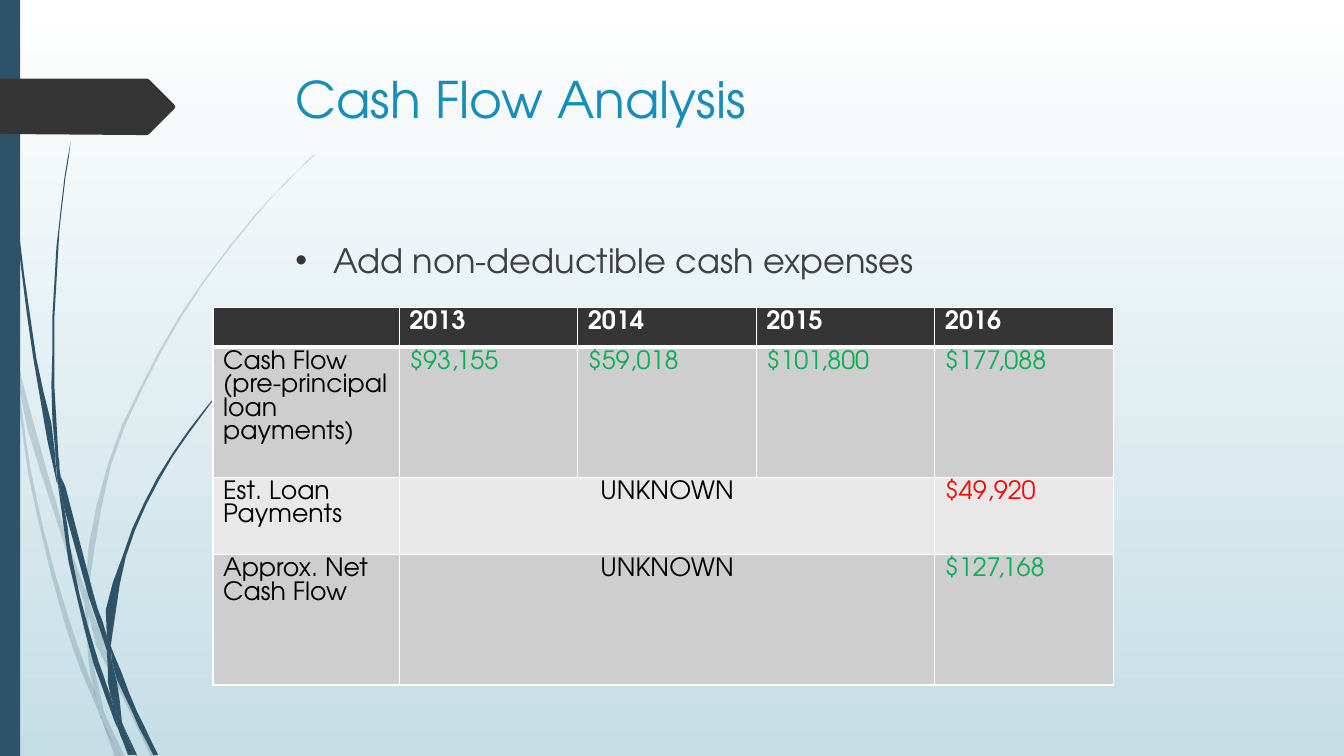
from dataclasses import dataclass

import lxml.etree
import pptx
import pptx.dml.color
import pptx.enum.dml
import pptx.enum.shapes
import pptx.enum.text
import pptx.oxml.ns
import pptx.util

Cm = pptx.util.Cm
Pt = pptx.util.Pt
qn = pptx.oxml.ns.qn
LEFT = pptx.enum.text.PP_ALIGN.LEFT
CENTER = pptx.enum.text.PP_ALIGN.CENTER

FONT = "TeX Gyre Adventor"
COLORS = {
    "sky_top": "FFFFFF", "sky_bottom": "C5DEE5", "wisp": "2E5369", "tag": "353535",
    "title": "178DBB", "body": "404040", "white": "FFFFFF", "black": "000000",
    "green": "00B050", "red": "FF0000", "dark_band": "CECECE", "light_band": "E8E8E8",
}
OUTLINE_UNITS_PER_CM = 100 / 2.54
CURVE_STEPS = 3

Point = tuple[float, float]


@dataclass
class Blade:
    """A piece of grass: one edge, then the other edge coming back."""
    edge: list[Point]
    back: list[Point]


@dataclass
class Entry:
    text: str
    color: str = "black"
    columns: int = 1
    bold: bool = False


@dataclass
class Band:
    height: float
    fill: str
    entries: list[Entry]
    bottom_line: float = 1


PALE_GRASS = [
    Blade([(11, 350), (9, 322), (0, 282)], [(0, 299), (10, 344)]),
    Blade([(14, 345), (17, 376), (58, 522), (84, 599)], [(85, 586), (62, 520), (14, 345)]),
    Blade([(88, 596), (88, 610), (123, 694), (150, 751)], [(155, 751), (127, 692), (92, 607)]),
    Blade([(119, 751), (124, 751)], [(105, 711)]),
    Blade([(93, 683), (70, 619), (31, 469), (17, 376), (11, 350)],
          [(28, 470), (65, 621), (92, 693), (101, 714), (99, 707)]),
    Blade([(84, 599), (87, 646), (93, 683), (96, 692), (105, 711)],
          [(103, 706), (91, 646), (88, 610), (88, 608)]),
    Blade([(88, 584), (110, 462), (160, 349), (229, 245), (268, 198), (290, 175), (312, 154)],
          [(312, 153), (289, 175), (268, 197), (228, 244), (158, 348), (107, 461),
           (85, 584), (85, 586), (88, 596)]),
    Blade([(101, 714), (114, 751)], [(119, 751)]),
    Blade([(88, 608), (88, 596)], [(85, 586), (84, 599)]),
    Blade([(96, 692), (93, 683), (99, 707), (101, 714), (119, 751)], [(105, 711)]),
]
DARK_GRASS = [
    Blade([(7, 110), (17, 233), (33, 355), (56, 477), (57, 481)],
          [(55, 457), (55, 453), (36, 355), (19, 232), (8, 109), (5, 48), (4, 0), (3, 0),
           (4, 48)]),
    Blade([(88, 592), (106, 645)], [(106, 631), (93, 590), (60, 472), (64, 505)]),
    Blade([(110, 641), (111, 656), (132, 708), (152, 749)], [(157, 749), (136, 706), (113, 649)]),
    Blade([(110, 691), (98, 657), (72, 556), (64, 505), (57, 477)],
          [(68, 557), (93, 659), (111, 708), (117, 722), (116, 717)]),
    Blade([(60, 472), (58, 453), (54, 349), (58, 245), (63, 193), (70, 141)],
          [(69.8, 141), (62, 193), (56, 245), (52, 349), (55, 449), (60, 472)]),
    Blade([(133, 749), (136, 749)], [(122, 719)]),
    Blade([(57, 477), (64, 505)], [(60, 472), (55, 449), (55, 453)]),
    Blade([(111, 633), (125, 552), (158, 476), (205, 406), (231, 374), (245, 359), (261, 344)],
          [(260, 344), (245, 358), (231, 373), (204, 405), (156, 474), (122, 551),
           (106, 631), (110, 641)]),
    Blade([(117, 722), (127, 749)], [(131, 749)]),
    Blade([(106, 645), (110, 691), (116, 706), (122, 719)], [(121, 716), (111, 656), (109, 651)]),
    Blade([(106, 645), (109, 651), (111, 656)], [(110, 641), (106, 631)]),
    Blade([(116, 706), (110, 691), (116, 717), (117, 722), (130, 749)], [(133, 749), (122, 719)]),
]
PAGE_TAG = [(0, 78), (146, 78), (148, 79), (173, 104), (174, 106), (173, 108), (148, 133),
            (146, 134), (136, 134), (0, 133)]

COLUMN_WIDTHS = [4.69] + [4.5] * 4
BANDS = [
    Band(1, "tag", [Entry("")] + [Entry(str(year), "white", bold=True)
                                  for year in range(2013, 2017)], bottom_line=3),
    Band(3.28, "dark_band", [Entry("Cash Flow (pre-principal loan payments)")]
         + [Entry(amount, "green") for amount in ("$93,155", "$59,018", "$101,800", "$177,088")]),
    Band(1.95, "light_band", [Entry("Est. Loan Payments"), Entry("UNKNOWN", columns=3),
                              Entry("$49,920", "red")]),
    Band(3.28, "dark_band", [Entry("Approx. Net Cash Flow"), Entry("UNKNOWN", columns=3),
                             Entry("$127,168", "green")]),
]


def rgb(name: str) -> pptx.dml.color.RGBColor:
    return pptx.dml.color.RGBColor.from_string(COLORS[name])


def smooth_edge(points: list[Point]) -> list[Point]:
    """Points along a Hermite curve whose slopes are weighted by chord length."""
    if len(points) < 3:
        return points
    nodes = [complex(*point) for point in points]
    chords = [b - a for a, b in zip(nodes, nodes[1:])]
    units = [chord / abs(chord) for chord in chords]
    slopes = [units[0]]
    for i in range(1, len(chords)):
        before, after = abs(chords[i - 1]), abs(chords[i])
        slopes.append((units[i - 1] * after + units[i] * before) / (before + after))
    slopes.append(units[-1])
    curve = [points[0]]
    for i, chord in enumerate(chords):
        for step in range(1, CURVE_STEPS + 1):
            t = step / CURVE_STEPS
            bend = t * (1 - t) ** 2 * slopes[i] - t * t * (1 - t) * slopes[i + 1]
            spot = nodes[i] + chord * t * t * (3 - 2 * t) + abs(chord) * bend
            curve.append((spot.real, spot.imag))
    return curve


def paint(shape, color: str, opacity: int = 100) -> None:
    shape.shadow.inherit = False
    shape.fill.solid()
    shape.fill.fore_color.rgb = rgb(color)
    shape.line.fill.background()
    if opacity < 100:
        tint = next(shape.element.iter(qn("a:srgbClr")))
        lxml.etree.SubElement(tint, qn("a:alpha"), val=str(opacity * 1000))


def draw_outline(page, outline: list[Point], color: str, opacity: int = 100) -> None:
    builder = page.shapes.build_freeform(*outline[0], scale=Cm(1) / OUTLINE_UNITS_PER_CM)
    builder.add_line_segments(outline[1:], close=True)
    paint(builder.convert_to_shape(), color, opacity)


def write(para, text: str, size: float, color: str, bold: bool = False) -> None:
    span = para.add_run()
    span.text = text
    span.font.name = FONT
    span.font.size = Pt(size)
    span.font.bold = bold
    span.font.color.rgb = rgb(color)


def fill_placeholder(box, top: float, height: float, text: str, size: float, color: str):
    """Place the box in front, write its text and return its paragraph."""
    box.left, box.top, box.width, box.height = Cm(7.19), Cm(top), Cm(24.77), Cm(height)
    box.element.getparent().append(box.element)
    frame = box.text_frame
    frame.word_wrap = True
    frame.auto_size = pptx.enum.text.MSO_AUTO_SIZE.NONE
    frame.vertical_anchor = pptx.enum.text.MSO_ANCHOR.TOP
    para = frame.paragraphs[0]
    para.alignment = LEFT
    write(para, text, size, color)
    return para


def add_bullet(para) -> None:
    para.space_before = Pt(10)
    properties = para._p.get_or_add_pPr()
    properties.set("marL", str(Cm(0.95)))
    properties.set("indent", str(-Cm(0.95)))
    tint = lxml.etree.SubElement(properties, qn("a:buClr"))
    lxml.etree.SubElement(tint, qn("a:srgbClr"), val=COLORS["tag"])
    lxml.etree.SubElement(properties, qn("a:buFont"), typeface="Arial")
    lxml.etree.SubElement(properties, qn("a:buChar"), char="•")


def style_cell(cell, fill: str, top_line: float, bottom_line: float) -> None:
    properties = cell._tc.get_or_add_tcPr()
    for side, width in (("L", 1), ("R", 1), ("T", top_line), ("B", bottom_line)):
        line = lxml.etree.SubElement(properties, qn(f"a:ln{side}"), w=str(Pt(width)))
        solid = lxml.etree.SubElement(line, qn("a:solidFill"))
        lxml.etree.SubElement(solid, qn("a:srgbClr"), val=COLORS["white"])
    cell.fill.solid()
    cell.fill.fore_color.rgb = rgb(fill)
    cell.margin_top = Cm(0.08)


def draw_table(page) -> None:
    table = page.shapes.add_table(
        len(BANDS), len(COLUMN_WIDTHS), Cm(5.37), Cm(7.75), Cm(sum(COLUMN_WIDTHS)),
        Cm(sum(band.height for band in BANDS))).table
    for column, width in zip(table.columns, COLUMN_WIDTHS):
        column.width = Cm(width)
    top_line = 1
    for row, band in enumerate(BANDS):
        table.rows[row].height = Cm(band.height)
        for cell in table.rows[row].cells:
            style_cell(cell, band.fill, top_line, band.bottom_line)
        top_line = band.bottom_line
        column = 0
        for entry in band.entries:
            cell = table.cell(row, column)
            if entry.columns > 1:
                cell.merge(table.cell(row, column + entry.columns - 1))
            para = cell.text_frame.paragraphs[0]
            para.alignment = CENTER if entry.columns > 1 else LEFT
            if entry.text:
                write(para, entry.text, 18, entry.color, entry.bold)
            column += entry.columns


def main() -> None:
    deck = pptx.Presentation()
    deck.slide_width, deck.slide_height = Cm(33.87), Cm(19.05)
    page = deck.slides.add_slide(deck.slide_layouts[1])
    sky = page.background.fill
    sky.gradient()
    sky.gradient_angle = 270
    for stop, color, position in zip(sky.gradient_stops, ("sky_top", "sky_bottom"), (0, 1)):
        stop.color.rgb = rgb(color)
        stop.position = position
    for grass, opacity in ((PALE_GRASS, 20), (DARK_GRASS, 100)):
        for blade in grass:
            draw_outline(page, smooth_edge(blade.edge) + smooth_edge(blade.back), "wisp", opacity)
    rectangle = pptx.enum.shapes.MSO_SHAPE.RECTANGLE
    paint(page.shapes.add_shape(rectangle, 0, 0, Cm(0.51), Cm(19.05)), "wisp")
    draw_outline(page, PAGE_TAG, "tag")
    title, body = page.placeholders
    fill_placeholder(title, 1.6, 3.56, "Cash Flow Analysis", 36, "title")
    add_bullet(fill_placeholder(body, 5.92, 10.49, "Add non-deductible cash expenses", 24, "body"))
    draw_table(page)
    deck.save("out.pptx")


if __name__ == "__main__":
    main()
